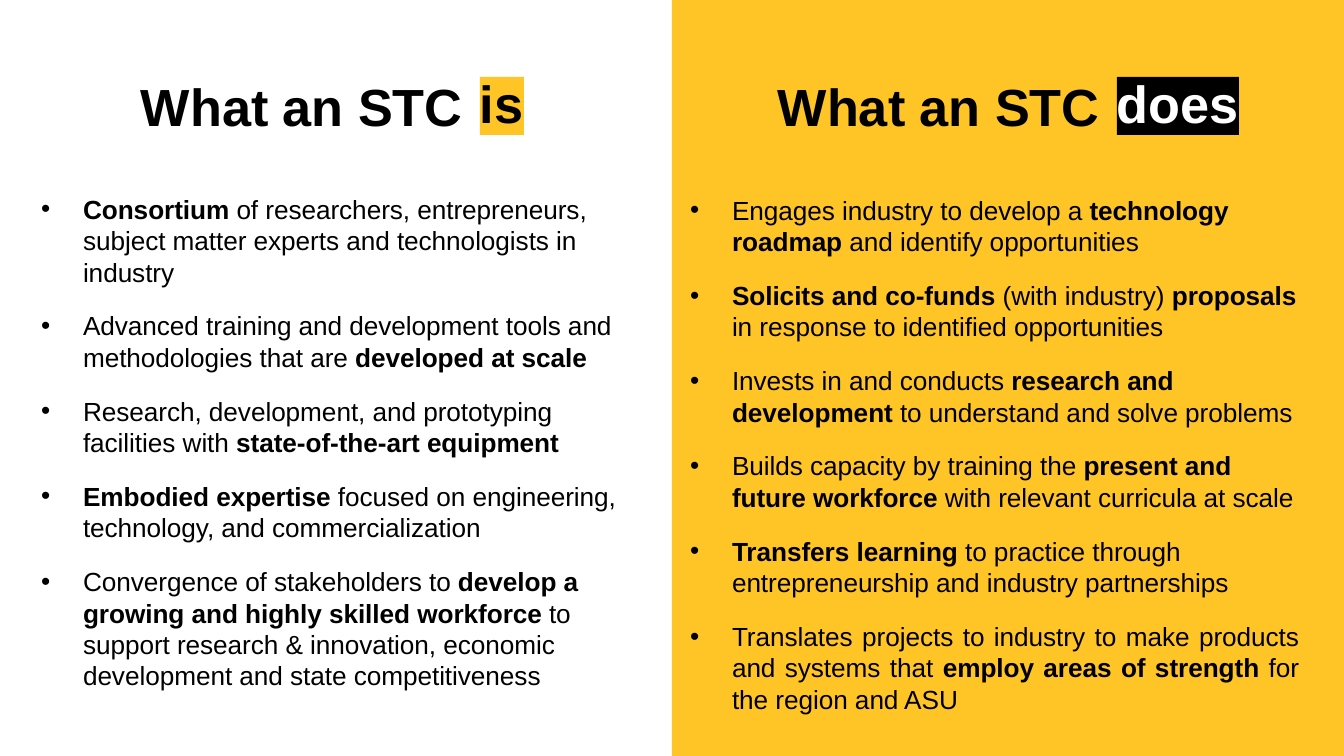
from pptx import Presentation
from pptx.dml.color import RGBColor as Rgb
from pptx.enum.shapes import MSO_SHAPE as Preset
from pptx.enum.text import MSO_ANCHOR as Anchor, MSO_AUTO_SIZE as AutoSize, PP_ALIGN as Align
from pptx.oxml.ns import qn
from pptx.util import Inches, Pt
from lxml.etree import SubElement

GOLD, BLACK, WHITE = "FFC527", "000000", "FFFFFF"

STC_IS = [
    "*Consortium* of researchers, entrepreneurs, subject matter experts and technologists in industry",
    "Advanced training and development tools and methodologies that are *developed at scale*",
    "Research, development, and prototyping facilities with *state-of-the-art equipment*",
    "*Embodied expertise* focused on engineering, technology, and commercialization",
    "Convergence of stakeholders to *develop a growing and highly skilled workforce* to support "
    "research & innovation, economic development and state competitiveness",
]
STC_DOES = [
    "Engages industry to develop a *technology roadmap* and identify opportunities",
    "*Solicits and co-funds* (with industry) *proposals* in response to identified opportunities",
    "Invests in and conducts *research and development* to understand and solve problems",
    "Builds capacity by training the *present and future workforce* with relevant curricula at scale",
    "*Transfers learning* to practice through entrepreneurship and industry partnerships",
    "Translates projects to industry to make products and systems that *employ areas of strength* "
    "for the region and ASU",
]


def px(count):
    """Turn whole pixels into EMU."""
    return round(count * Inches(1) / 100.8)


def color(code):
    """Read a hex colour."""
    return Rgb.from_string(code)


class Builder:
    """Holds the style and the current slide."""

    font = "Arial"
    heading_size, list_size = 37.3, 18.7
    tracking = "-5"

    def __init__(self, slide):
        """Keep the slide to draw on."""
        self.slide = slide

    def style(self, span, size, ink, bold):
        """Format one run."""
        span.font.name = self.font
        span.font.size = Pt(size)
        span.font.bold = bold
        span.font.color.rgb = color(ink)
        span.font._element.set("spc", self.tracking)

    def place(self, box, left, top, width, height):
        """Move and size a box."""
        box.left, box.top, box.width, box.height = map(px, (left, top, width, height))

    def frame(self, box, inset):
        """Set up the text frame of a box."""
        frame = box.text_frame
        frame.word_wrap = True
        frame.auto_size = AutoSize.NONE
        frame.vertical_anchor = Anchor.TOP
        frame.margin_left = frame.margin_right = frame.margin_bottom = 0
        frame.margin_top = px(inset)
        return frame

    def block(self, left, top, width, height, fill):
        """Draw a plain filled rectangle."""
        box = self.slide.shapes.add_shape(Preset.RECTANGLE, *map(px, (left, top, width, height)))
        box.shadow.inherit = False
        box.fill.solid()
        box.fill.fore_color.rgb = color(fill)
        box.line.fill.background()
        return box

    def backdrop(self, left, top, width, height, fill):
        """Draw a rectangle behind everything else."""
        element = self.block(left, top, width, height, fill).element
        element.getparent().insert(2, element)

    def heading(self, box, left, text):
        """Write a column heading."""
        self.place(box, left, 70, 328, 66)
        self.line(self.frame(box, 4), text, BLACK)

    def line(self, frame, text, ink):
        """Write one bold heading line."""
        frame.text = text
        para = frame.paragraphs[0]
        para.alignment = Align.LEFT
        self.style(para.runs[0], self.heading_size, ink, True)
        return para

    def highlight(self, left, width, text, fill, ink):
        """Draw the marked word that ends a heading."""
        box = self.block(left, 77, width, 58, fill)
        self.line(self.frame(box, 0), text, ink).line_spacing = Pt(40.7)

    def bullets(self, box, left, top, width, height, items):
        """Fill a bulleted list, with bold between asterisks."""
        self.place(box, left, top, width, height)
        frame = self.frame(box, 4)
        for index, item in enumerate(items):
            para = frame.add_paragraph() if index else frame.paragraphs[0]
            para.alignment = Align.LEFT
            para.space_before = Pt(16 if index else 0)
            properties = para._p.get_or_add_pPr()
            properties.set("marL", str(px(44)))
            properties.set("indent", str(px(-42)))
            SubElement(properties, qn("a:buFont")).set("typeface", self.font)
            SubElement(properties, qn("a:buChar")).set("char", "•")
            for part, text in enumerate(item.split("*")):
                if text:
                    span = para.add_run()
                    span.text = text
                    self.style(span, self.list_size, BLACK, part % 2 == 1)
        return frame


def main():
    """Build and save the slide."""
    deck = Presentation()
    deck.slide_width, deck.slide_height = px(1344), px(756)
    page = deck.slides.add_slide(deck.slide_layouts[3])
    title, left_list, right_list = page.placeholders
    builder = Builder(page)

    builder.backdrop(672, 0, 672, 756, GOLD)
    builder.heading(title, 141, "What an STC")
    builder.highlight(480, 44, "is", GOLD, BLACK)
    builder.bullets(left_list, 39, 189, 585, 504, STC_IS)

    builder.heading(page.shapes.add_textbox(0, 0, 0, 0), 778, "What an STC")
    builder.highlight(1117, 122, "does", BLACK, WHITE)
    frame = builder.bullets(right_list, 688, 190, 611, 526, STC_DOES)
    frame.paragraphs[-1].alignment = Align.JUSTIFY

    deck.save("out.pptx")


if __name__ == "__main__":
    main()
